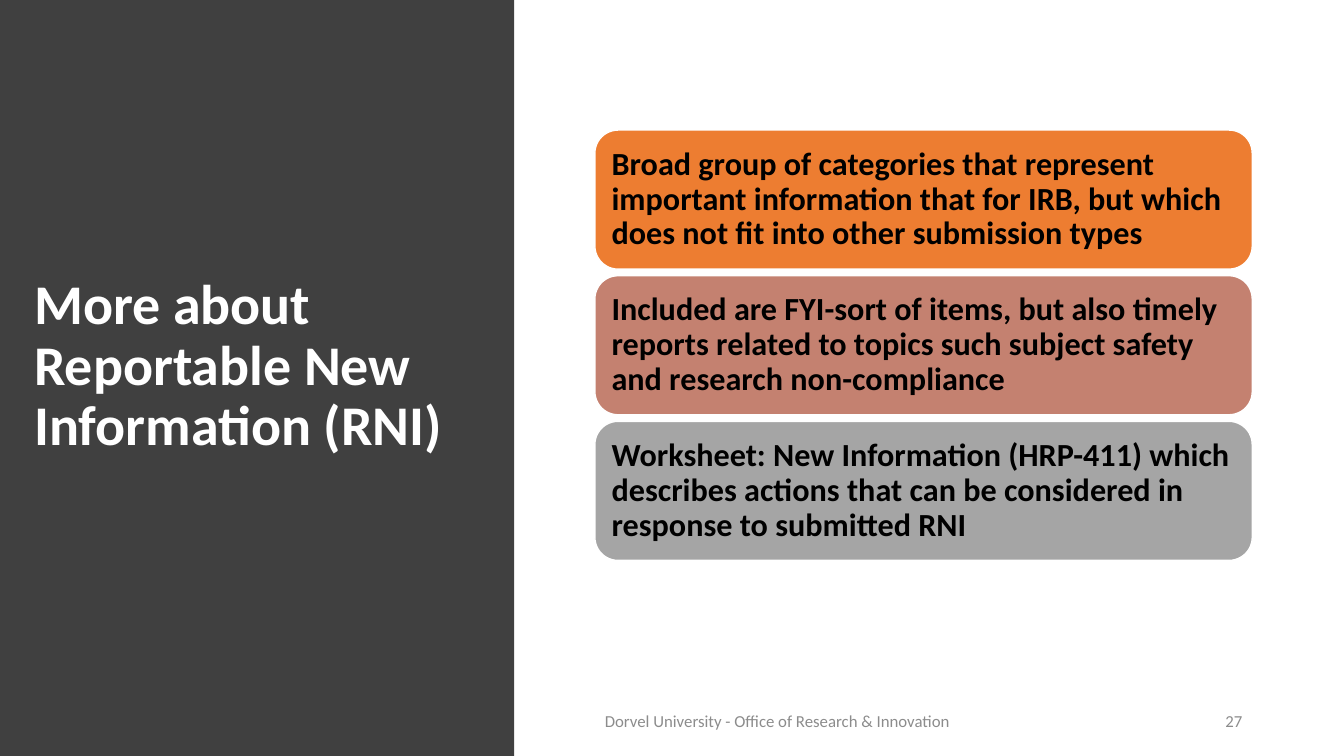
from pptx import Presentation
from pptx.dml.color import RGBColor
from pptx.enum.shapes import MSO_SHAPE
from pptx.enum.text import MSO_ANCHOR, MSO_AUTO_SIZE, PP_ALIGN
from pptx.util import Inches, Pt

WHITE = RGBColor(0xFF, 0xFF, 0xFF)
BLACK = RGBColor(0x00, 0x00, 0x00)
DARK = RGBColor(0x40, 0x40, 0x40)
MUTED = RGBColor(0x8C, 0x8C, 0x8C)
ORANGE = RGBColor(0xED, 0x7D, 0x31)
ROSE = RGBColor(0xC4, 0x81, 0x70)
GRAY = RGBColor(0xA5, 0xA5, 0xA5)

HEAD = {"size": Pt(40), "bold": True}
BODY = {"size": Pt(23), "bold": True}
SMALL = {"size": Pt(12), "bold": False}

CARDS = [
    (ORANGE, "Broad group of categories that represent important information "
             "that for IRB, but which does not fit into other submission types"),
    (ROSE, "Included are FYI-sort of items, but also timely reports related "
           "to topics such subject safety and research non-compliance"),
    (GRAY, "Worksheet: New Information (HRP-411) which describes actions that "
           "can be considered in response to submitted RNI"),
]
LEFT, TOP, WIDTH, HEIGHT, STEP = 5.9, 1.29, 6.52, 1.38, 1.445


def set_text(shape, text, style, color, align=PP_ALIGN.LEFT, space=None):
    frame = shape.text_frame
    frame.word_wrap = True
    frame.auto_size = MSO_AUTO_SIZE.NONE
    frame.vertical_anchor = MSO_ANCHOR.MIDDLE
    frame.text = text
    para = frame.paragraphs[0]
    para.alignment = align
    para.line_spacing = space
    font = para.runs[0].font
    font.name = "Calibri"
    font.color.rgb = color
    for key, value in style.items():
        setattr(font, key, value)


def add_block(slide, kind, box, fill):
    block = slide.shapes.add_shape(kind, *map(Inches, box))
    block.shadow.inherit = False
    block.fill.solid()
    block.fill.fore_color.rgb = fill
    block.line.fill.background()
    return block


def add_card(slide, top, fill, text):
    box = (LEFT, top, WIDTH, HEIGHT)
    card = add_block(slide, MSO_SHAPE.ROUNDED_RECTANGLE, box, fill)
    card.line.color.rgb = WHITE
    card.line.width = Pt(1)
    frame = card.text_frame
    for side in ("left", "top", "right", "bottom"):
        setattr(frame, f"margin_{side}", Inches(0.1))
    set_text(card, text, BODY, BLACK, space=0.9)


def add_note(slide, left, width, text, align):
    box = (left, 6.95, width, 0.4)
    note = slide.shapes.add_textbox(*map(Inches, box))
    set_text(note, text, SMALL, MUTED, align)


def add_title(slide, text):
    title = slide.shapes.title
    place = {"left": 0.24, "top": 0.68, "width": 4.6, "height": 5.92}
    for key, value in place.items():
        setattr(title, key, Inches(value))
    set_text(title, text, HEAD, WHITE, space=0.9)


def main():
    deck = Presentation()
    deck.slide_width = Inches(13.33)
    deck.slide_height = Inches(7.5)
    slide = deck.slides.add_slide(deck.slide_layouts[5])

    panel = add_block(slide, MSO_SHAPE.RECTANGLE, (0, 0, 5.1, 7.5), DARK)
    slide.shapes.title._element.addprevious(panel._element)
    add_title(slide, "More about Reportable New Information (RNI)")

    add_note(slide, LEFT, 4.9,
             "Dorvel University - Office of Research & Innovation",
             PP_ALIGN.LEFT)
    add_note(slide, 11.08, 1.34, "27", PP_ALIGN.RIGHT)

    for row, (fill, text) in enumerate(CARDS):
        add_card(slide, TOP + row * STEP, fill, text)

    deck.save("out.pptx")


if __name__ == "__main__":
    main()
